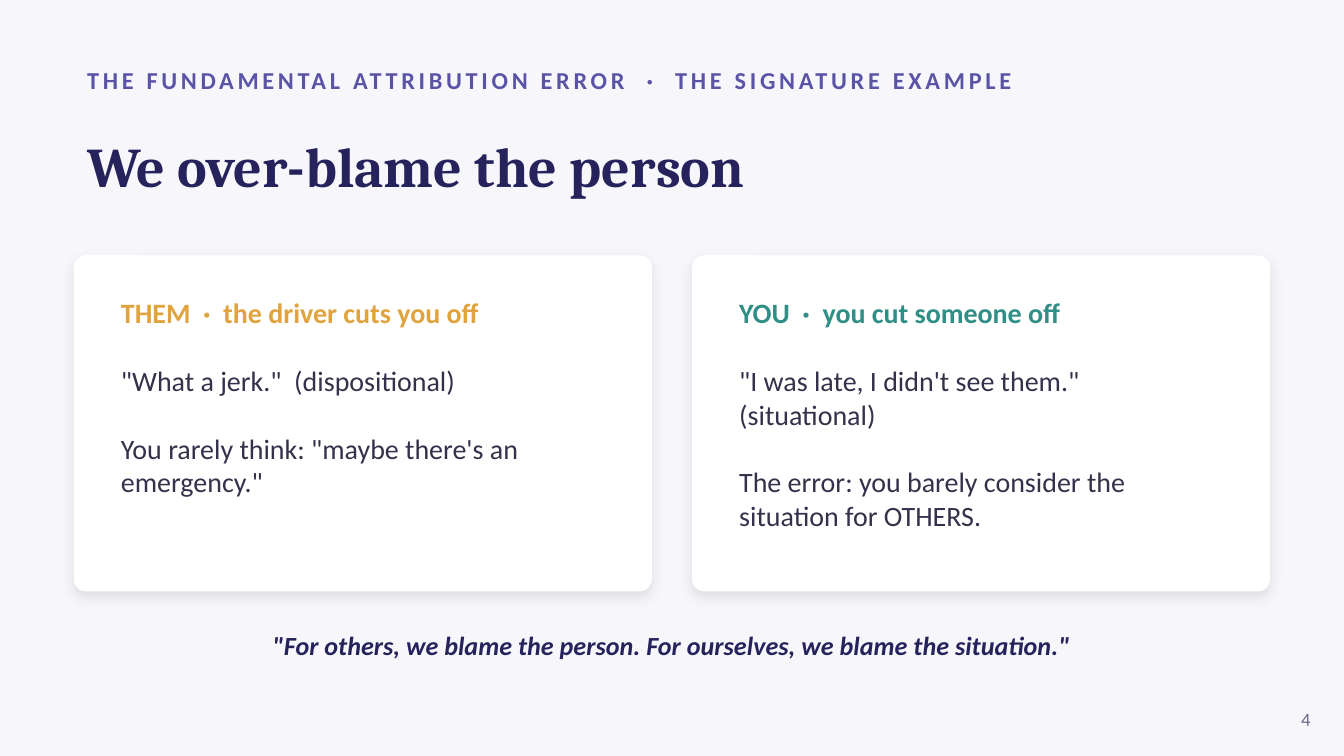
from dataclasses import dataclass

from lxml import etree
from pptx import Presentation
from pptx.dml.color import RGBColor
from pptx.enum.shapes import MSO_SHAPE
from pptx.enum.text import MSO_ANCHOR, MSO_AUTO_SIZE, PP_ALIGN
from pptx.oxml.ns import qn
from pptx.util import Pt

ROUND = MSO_SHAPE.ROUNDED_RECTANGLE
TOP, MIDDLE = MSO_ANCHOR.TOP, MSO_ANCHOR.MIDDLE
LEFT, CENTER, RIGHT = PP_ALIGN.LEFT, PP_ALIGN.CENTER, PP_ALIGN.RIGHT
FIXED = MSO_AUTO_SIZE.NONE


@dataclass(frozen=True)
class Style:
    size: float
    color: str
    bold: bool = False
    italic: bool = False
    face: str = "Calibri"
    track: float = 0


@dataclass(frozen=True)
class Theme:
    back: str = "F7F7FB"
    card: str = "FFFFFF"
    shade: str = "000000"
    label: Style = Style(13, "5B53A6", bold=True, track=2)
    title: Style = Style(30, "26235C", bold=True, face="Cambria")
    them: Style = Style(15, "E0A33E", bold=True)
    you: Style = Style(15, "2F8F86", bold=True)
    body: Style = Style(15, "33324A")
    quote: Style = Style(14, "26235C", bold=True, italic=True)
    number: Style = Style(10, "6B6A86")


@dataclass(frozen=True)
class Box:
    left: float
    top: float
    width: float
    height: float


@dataclass(frozen=True)
class Card:
    head: str
    style: Style
    lines: tuple[str, ...]


@dataclass(frozen=True)
class Note:
    text: str
    style: Style
    box: Box
    align: PP_ALIGN


THEME = Theme()
EDGE = 39.6
WIDE = 640.8
CARD_W, CARD_H, CARD_TOP = 309.6, 180, 136.8
STEP = WIDE - CARD_W
PAD = 18
GAP = 18.3  # one line of body text

CARDS = (
    Card("THEM  ·  the driver cuts you off", THEME.them,
         ('"What a jerk."  (dispositional)',
          'You rarely think: "maybe there\'s an emergency."')),
    Card("YOU  ·  you cut someone off", THEME.you,
         ('"I was late, I didn\'t see them."  (situational)',
          "The error: you barely consider the situation for OTHERS.")),
)
NOTES = (
    Note("THE FUNDAMENTAL ATTRIBUTION ERROR  ·  THE SIGNATURE EXAMPLE",
         THEME.label, Box(EDGE, 30.24, 648, 25.2), LEFT),
    Note('"For others, we blame the person. For ourselves, we blame the situation."',
         THEME.quote, Box(EDGE, 331.2, WIDE, 28.8), CENTER),
    Note("4", THEME.number, Box(673.2, 374.4, 36, 21.6), RIGHT),
)


def place(shape, box: Box) -> None:
    shape.left, shape.top = Pt(box.left), Pt(box.top)
    shape.width, shape.height = Pt(box.width), Pt(box.height)


def set_up(frame, anchor) -> None:
    frame.word_wrap = True
    frame.auto_size = FIXED
    frame.vertical_anchor = anchor


def write(para, text: str, style: Style, align=LEFT, before: float = 0) -> None:
    para.alignment = align
    para.space_before = Pt(before)
    run = para.add_run()
    run.text = text
    font = run.font
    font.name, font.size = style.face, Pt(style.size)
    font.bold, font.italic = style.bold, style.italic
    font.color.rgb = RGBColor.from_string(style.color)
    if style.track:
        run._r.get_or_add_rPr().set("spc", str(round(style.track * 100)))


def no_bullet(para) -> None:
    props = para._p.get_or_add_pPr()
    props.set("marL", "0")
    props.set("indent", "0")
    etree.SubElement(props, qn("a:buNone"))


def add_shade(shape) -> None:
    shape.shadow.inherit = False
    effects = shape._element.spPr.find(qn("a:effectLst"))
    outer = etree.SubElement(effects, qn("a:outerShdw"), blurRad=str(Pt(7)),
                             dist=str(Pt(3)), dir="5400000", algn="bl",
                             rotWithShape="0")
    color = etree.SubElement(outer, qn("a:srgbClr"), val=THEME.shade)
    etree.SubElement(color, qn("a:alpha"), val="10000")


def add_card(slide, card: Card, body, left: float) -> None:
    panel = slide.shapes.add_shape(ROUND, 0, 0, 0, 0)
    place(panel, Box(left, CARD_TOP, CARD_W, CARD_H))
    panel.adjustments[0] = 0.036
    panel.fill.solid()
    panel.fill.fore_color.rgb = RGBColor.from_string(THEME.card)
    panel.line.fill.background()
    add_shade(panel)
    body._element.addprevious(panel._element)  # panel sits behind its text

    place(body, Box(left + PAD, CARD_TOP + PAD, CARD_W - 2 * PAD, 151.2))
    frame = body.text_frame
    set_up(frame, TOP)
    para = frame.paragraphs[0]
    no_bullet(para)
    write(para, card.head, card.style)
    for line in card.lines:
        para = frame.add_paragraph()
        no_bullet(para)
        write(para, line, THEME.body, before=GAP)


def add_note(slide, note: Note) -> None:
    shape = slide.shapes.add_textbox(0, 0, 0, 0)
    place(shape, note.box)
    set_up(shape.text_frame, MIDDLE)
    write(shape.text_frame.paragraphs[0], note.text, note.style, note.align)


def main() -> None:
    deck = Presentation()
    deck.slide_width, deck.slide_height = Pt(720), Pt(405)
    slide = deck.slides.add_slide(deck.slide_layouts.get_by_name("Two Content"))
    slide.background.fill.solid()
    slide.background.fill.fore_color.rgb = RGBColor.from_string(THEME.back)

    # Title
    title = slide.shapes.title
    place(title, Box(EDGE, 56.16, WIDE, 64.8))
    set_up(title.text_frame, MIDDLE)
    write(title.text_frame.paragraphs[0], "We over-blame the person", THEME.title)

    # Two cards side by side
    for i, card in enumerate(CARDS):
        add_card(slide, card, slide.placeholders[i + 1], EDGE + i * STEP)

    # Label, quote and page number
    for note in NOTES:
        add_note(slide, note)

    deck.save("out.pptx")


if __name__ == "__main__":
    main()
